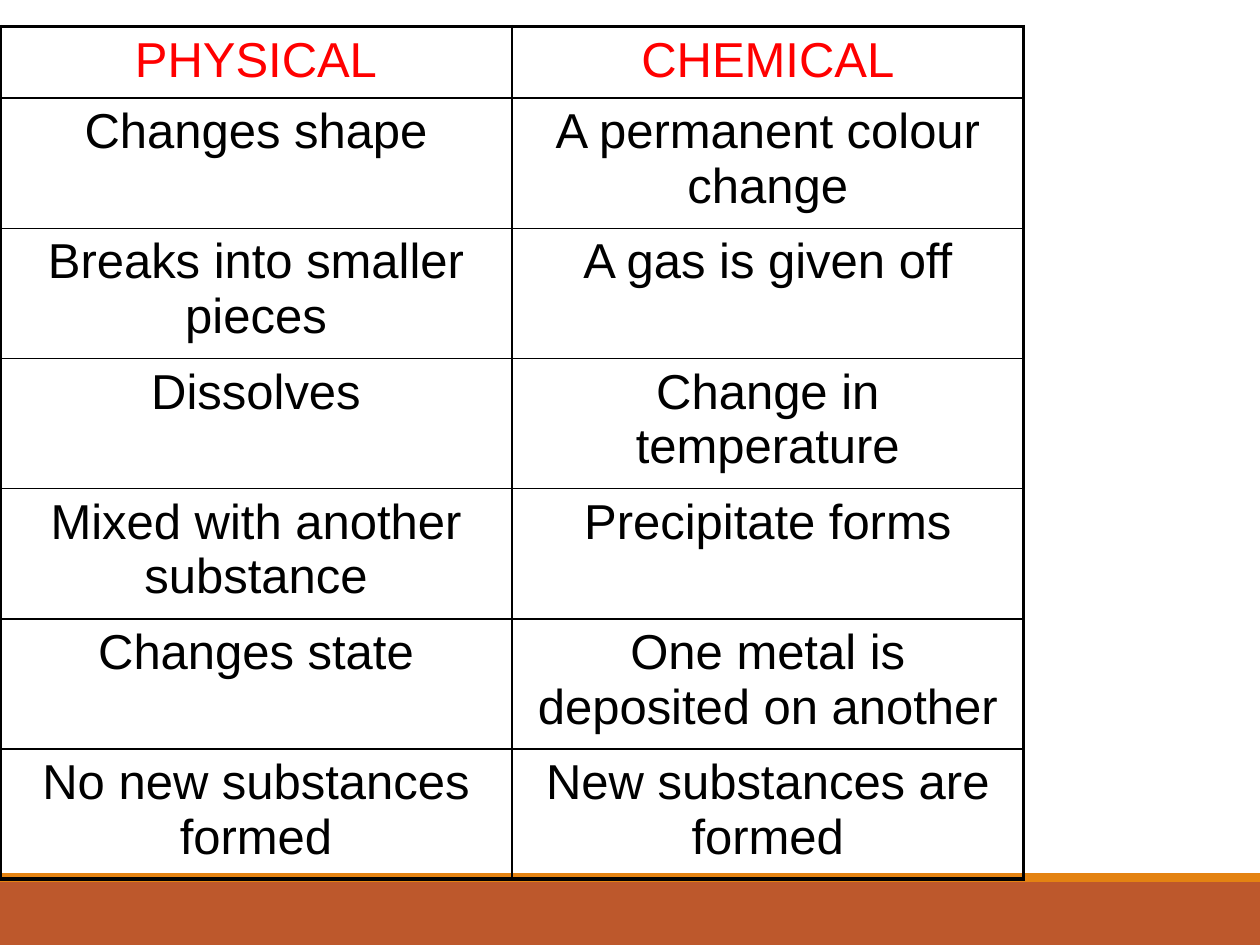
"""Build a slide comparing physical and chemical changes."""
from lxml import etree
from pptx import Presentation
from pptx import util as u
from pptx.dml.color import RGBColor
from pptx.enum import shapes, text
from pptx.oxml import ns

ROWS = [
    ("PHYSICAL", "CHEMICAL"),
    ("Changes shape", "A permanent colour change"),
    ("Breaks into smaller pieces", "A gas is given off"),
    ("Dissolves", "Change in temperature"),
    ("Mixed with another substance", "Precipitate forms"),
    ("Changes state", "One metal is deposited on another"),
    ("No new substances formed", "New substances are formed"),
]
RED = RGBColor(0xFF, 0x00, 0x00)
BLACK = RGBColor(0x00, 0x00, 0x00)
RUST = RGBColor(0xBD, 0x58, 0x2C)
ORANGE = RGBColor(0xE4, 0x83, 0x12)
BANDS = [(504, 36, RUST), (499, 5, ORANGE)]

SLIDE_WIDTH, SLIDE_HEIGHT = 720, 540
TABLE_TOP = 15.1
COLUMN_WIDTH = 292.5
HEADER_HEIGHT, ROW_HEIGHT = 41, 74.4
OUTER_LINE, INNER_LINE = 2.25, 1


def add_band(slide, top, height, color):
    band = slide.shapes.add_shape(
        shapes.MSO_SHAPE.RECTANGLE, 0, u.Pt(top), u.Pt(SLIDE_WIDTH), u.Pt(height))
    band.shadow.inherit = False
    band.fill.solid()
    band.fill.fore_color.rgb = color
    band.line.fill.background()


def set_borders(cell, outer_sides):
    properties = cell._tc.get_or_add_tcPr()
    for side, is_outer in outer_sides.items():
        width = OUTER_LINE if is_outer else INNER_LINE
        line = etree.SubElement(properties, ns.qn(f"a:ln{side}"), w=str(u.Pt(width)))
        fill = etree.SubElement(line, ns.qn("a:solidFill"))
        etree.SubElement(fill, ns.qn("a:srgbClr"), val=str(BLACK))


def format_cell(cell, wording, color):
    cell.fill.background()
    cell.text_frame.text = wording
    paragraph = cell.text_frame.paragraphs[0]
    paragraph.alignment = text.PP_ALIGN.CENTER
    font = paragraph.runs[0].font
    font.name = "Arial"
    font.size = u.Pt(28)
    font.bold = False
    font.color.rgb = color


def add_comparison(slide):
    row_count, column_count = len(ROWS), len(ROWS[0])
    heights = [HEADER_HEIGHT] + [ROW_HEIGHT] * (row_count - 1)
    table = slide.shapes.add_table(
        row_count, column_count, 0, u.Pt(TABLE_TOP),
        u.Pt(COLUMN_WIDTH * column_count), u.Pt(sum(heights))).table
    table.first_row = table.horz_banding = False
    for column in table.columns:
        column.width = u.Pt(COLUMN_WIDTH)
    for row_index, wordings in enumerate(ROWS):
        table.rows[row_index].height = u.Pt(heights[row_index])
        for column_index, wording in enumerate(wordings):
            cell = table.cell(row_index, column_index)
            set_borders(cell, {
                "L": column_index == 0,
                "R": column_index == column_count - 1,
                "T": row_index == 0,
                "B": row_index == row_count - 1,
            })
            format_cell(cell, wording, RED if row_index == 0 else BLACK)


def main():
    presentation = Presentation()
    presentation.slide_width = u.Pt(SLIDE_WIDTH)
    presentation.slide_height = u.Pt(SLIDE_HEIGHT)
    slide = presentation.slides.add_slide(presentation.slide_layouts[6])
    for band in BANDS:
        add_band(slide, *band)
    add_comparison(slide)
    presentation.save("out.pptx")


if __name__ == "__main__":
    main()
